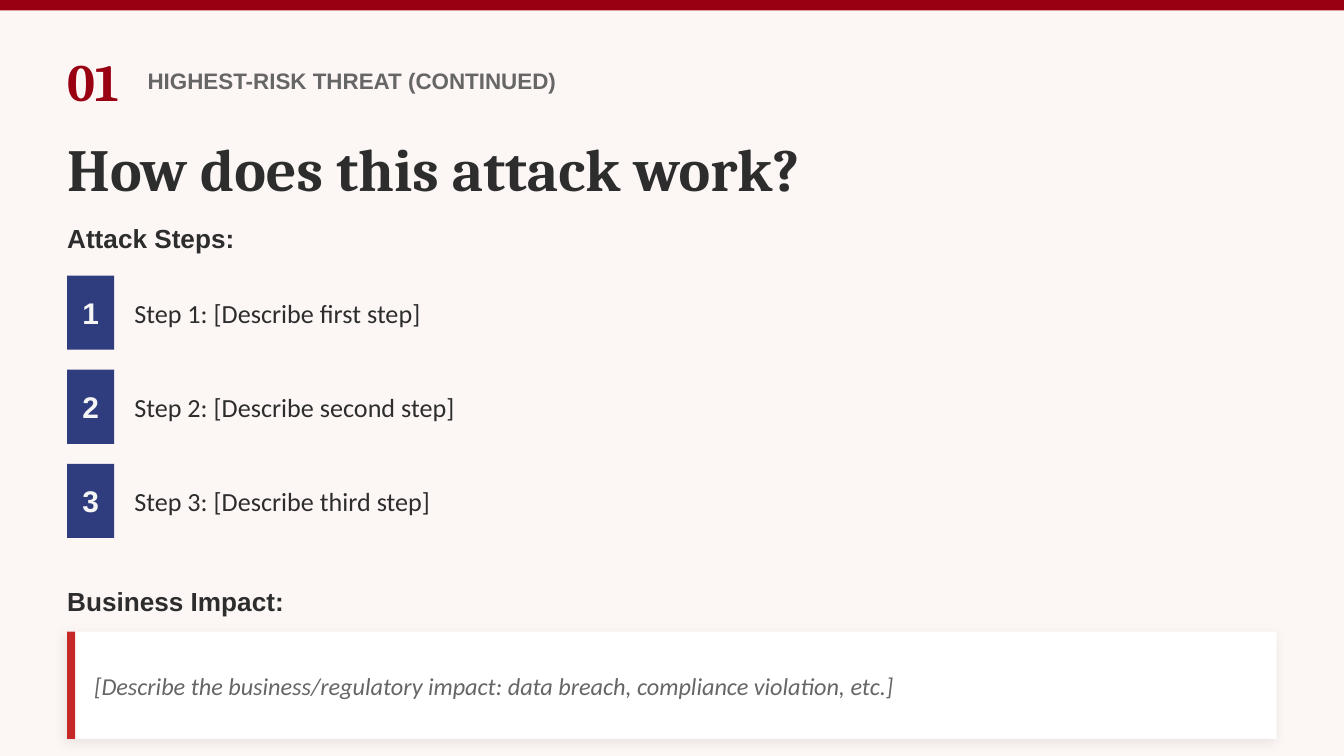
import pptx
import pptx.dml.color
import pptx.enum.shapes
import pptx.enum.text
import pptx.oxml
import pptx.oxml.ns
import pptx.util

Cm = pptx.util.Cm
ALIGN = pptx.enum.text.PP_ALIGN

# Content
SECTION_NUMBER = "01"
SECTION_LABEL = "HIGHEST-RISK THREAT (CONTINUED)"
TITLE = "How does this attack work?"
STEPS_HEADING = "Attack Steps:"
STEPS = [
    "Step 1: [Describe first step]",
    "Step 2: [Describe second step]",
    "Step 3: [Describe third step]",
]
IMPACT_HEADING = "Business Impact:"
IMPACT = "[Describe the business/regulatory impact: data breach, compliance violation, etc.]"

# Text formats and colours
CRIMSON, NAVY, RED, WHITE, CREAM = "990011", "2F3C7E", "C62828", "FFFFFF", "FCF6F5"
INK, GREY, PALE = "2D2D2D", "666666", "F5F5F5"
FORMATS = {
    "number": ({"name": "Cambria", "size": pptx.util.Pt(28), "bold": True}, CRIMSON),
    "label": ({"name": "Arial", "size": pptx.util.Pt(12), "bold": True}, GREY),
    "title": ({"name": "Cambria", "size": pptx.util.Pt(32), "bold": True}, INK),
    "heading": ({"name": "Arial", "size": pptx.util.Pt(14), "bold": True}, INK),
    "badge": ({"name": "Arial", "size": pptx.util.Pt(16), "bold": True}, PALE),
    "step": ({"name": "Calibri", "size": pptx.util.Pt(14)}, INK),
    "impact": ({"name": "Calibri", "size": pptx.util.Pt(13), "italic": True}, GREY),
}

# Layout in centimetres
SLIDE_WIDTH, SLIDE_HEIGHT = 25.4, 14.29
MARGIN = 1.27
CONTENT_WIDTH = SLIDE_WIDTH - 2 * MARGIN
HEADING_WIDTH, HEADING_HEIGHT = 10.16, 0.89
STEP_TOP, STEP_HEIGHT, STEP_PITCH = 5.21, 1.4, 1.78
BADGE_WIDTH, STEP_LEFT = 0.89, 2.54
CARD_TOP, CARD_HEIGHT, CARD_PADDING = 11.94, 2.03, 0.51


def color(hex_string):
    return pptx.dml.color.RGBColor.from_string(hex_string)


def write(shape, text, style, align=ALIGN.LEFT):
    frame = shape.text_frame
    frame_format = {
        "word_wrap": True,
        "vertical_anchor": pptx.enum.text.MSO_ANCHOR.MIDDLE,
        "margin_left": 0, "margin_right": 0, "margin_top": 0, "margin_bottom": 0,
    }
    for name, value in frame_format.items():
        setattr(frame, name, value)
    paragraph = frame.paragraphs[0]
    paragraph.alignment = align
    run = paragraph.add_run()
    run.text = text
    font_format, font_color = FORMATS[style]
    for name, value in font_format.items():
        setattr(run.font, name, value)
    run.font.color.rgb = color(font_color)


def add_text(slide, box, text, style):
    write(slide.shapes.add_textbox(*map(Cm, box)), text, style)


def add_block(slide, box, fill):
    shape = slide.shapes.add_shape(
        pptx.enum.shapes.MSO_SHAPE.RECTANGLE, *map(Cm, box))
    shape.fill.solid()
    shape.fill.fore_color.rgb = color(fill)
    shape.line.fill.background()
    shape.shadow.inherit = False
    return shape


def add_soft_shadow(shape):
    effects = shape._element.spPr.find(pptx.oxml.ns.qn("a:effectLst"))
    effects.append(pptx.oxml.parse_xml(
        f'<a:outerShdw {pptx.oxml.ns.nsdecls("a")} blurRad="{pptx.util.Pt(6)}" '
        f'dist="{pptx.util.Pt(2)}" dir="{135 * 60000}" algn="bl" rotWithShape="0">'
        '<a:srgbClr val="000000"><a:alpha val="8000"/></a:srgbClr></a:outerShdw>'))


def main():
    presentation = pptx.Presentation()
    presentation.slide_width = Cm(SLIDE_WIDTH)
    presentation.slide_height = Cm(SLIDE_HEIGHT)
    slide = presentation.slides.add_slide(presentation.slide_layouts[6])
    slide.background.fill.solid()
    slide.background.fill.fore_color.rgb = color(CREAM)

    # Top bar and header
    add_block(slide, (0, 0, SLIDE_WIDTH, 0.2), CRIMSON)
    add_text(slide, (MARGIN, 0.89, 1.52, 1.27), SECTION_NUMBER, "number")
    add_text(slide, (2.79, 1.02, 12.7, 1.02), SECTION_LABEL, "label")
    add_text(slide, (MARGIN, 2.41, CONTENT_WIDTH, 1.52), TITLE, "title")

    # Section headings
    for top, heading in ((4.06, STEPS_HEADING), (10.92, IMPACT_HEADING)):
        add_text(slide, (MARGIN, top, HEADING_WIDTH, HEADING_HEIGHT), heading, "heading")

    # Numbered steps
    step_width = SLIDE_WIDTH - MARGIN - STEP_LEFT
    for index, step in enumerate(STEPS):
        top = STEP_TOP + index * STEP_PITCH
        badge = add_block(slide, (MARGIN, top, BADGE_WIDTH, STEP_HEIGHT), NAVY)
        write(badge, str(index + 1), "badge", ALIGN.CENTER)
        add_text(slide, (STEP_LEFT, top, step_width, STEP_HEIGHT), step, "step")

    # Impact card with accent edge
    card = add_block(slide, (MARGIN, CARD_TOP, CONTENT_WIDTH, CARD_HEIGHT), WHITE)
    add_soft_shadow(card)
    add_block(slide, (MARGIN, CARD_TOP, 0.15, CARD_HEIGHT), RED)
    add_text(slide, (MARGIN + CARD_PADDING, CARD_TOP,
                     CONTENT_WIDTH - 2 * CARD_PADDING, CARD_HEIGHT), IMPACT, "impact")

    presentation.save("out.pptx")


if __name__ == "__main__":
    main()
